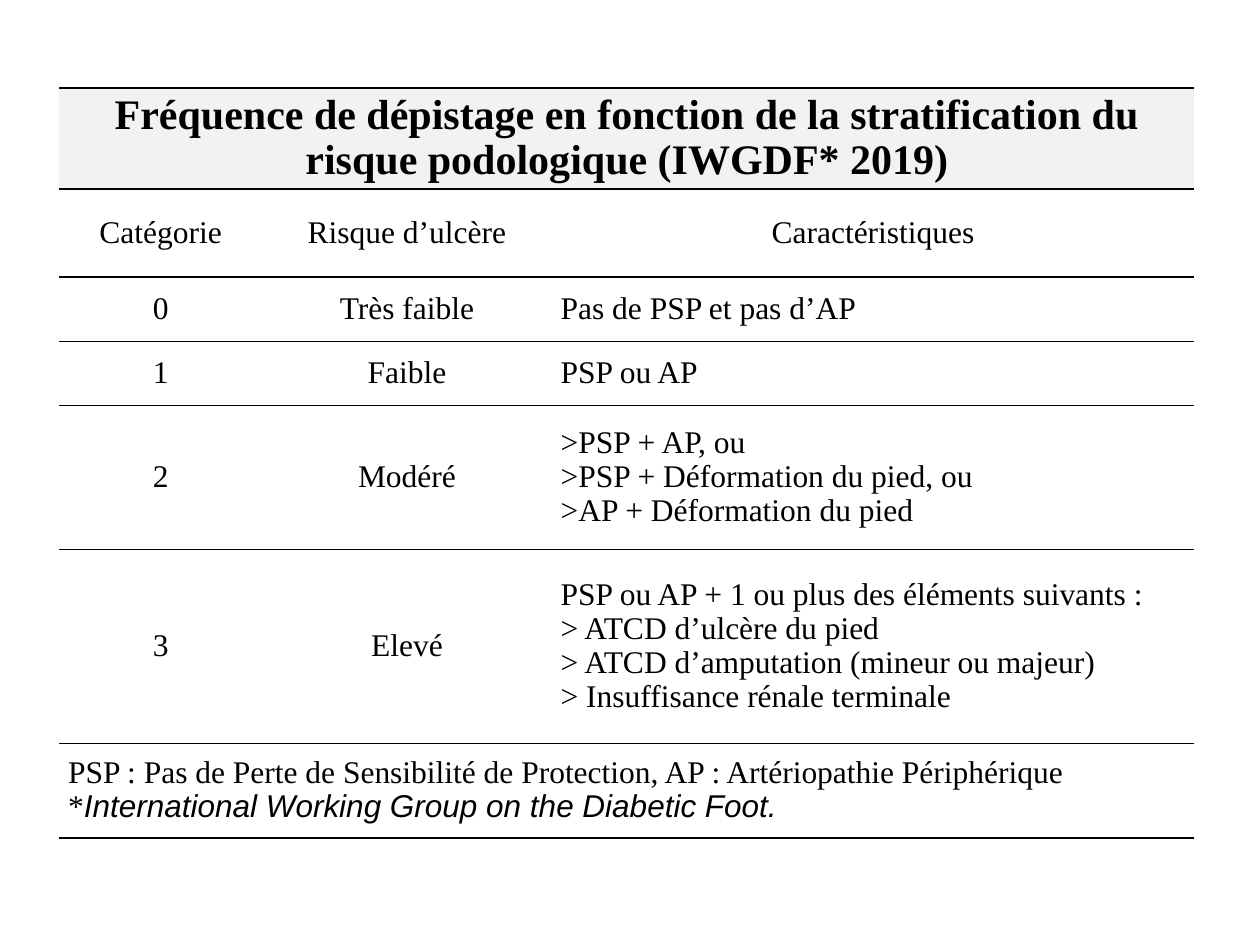
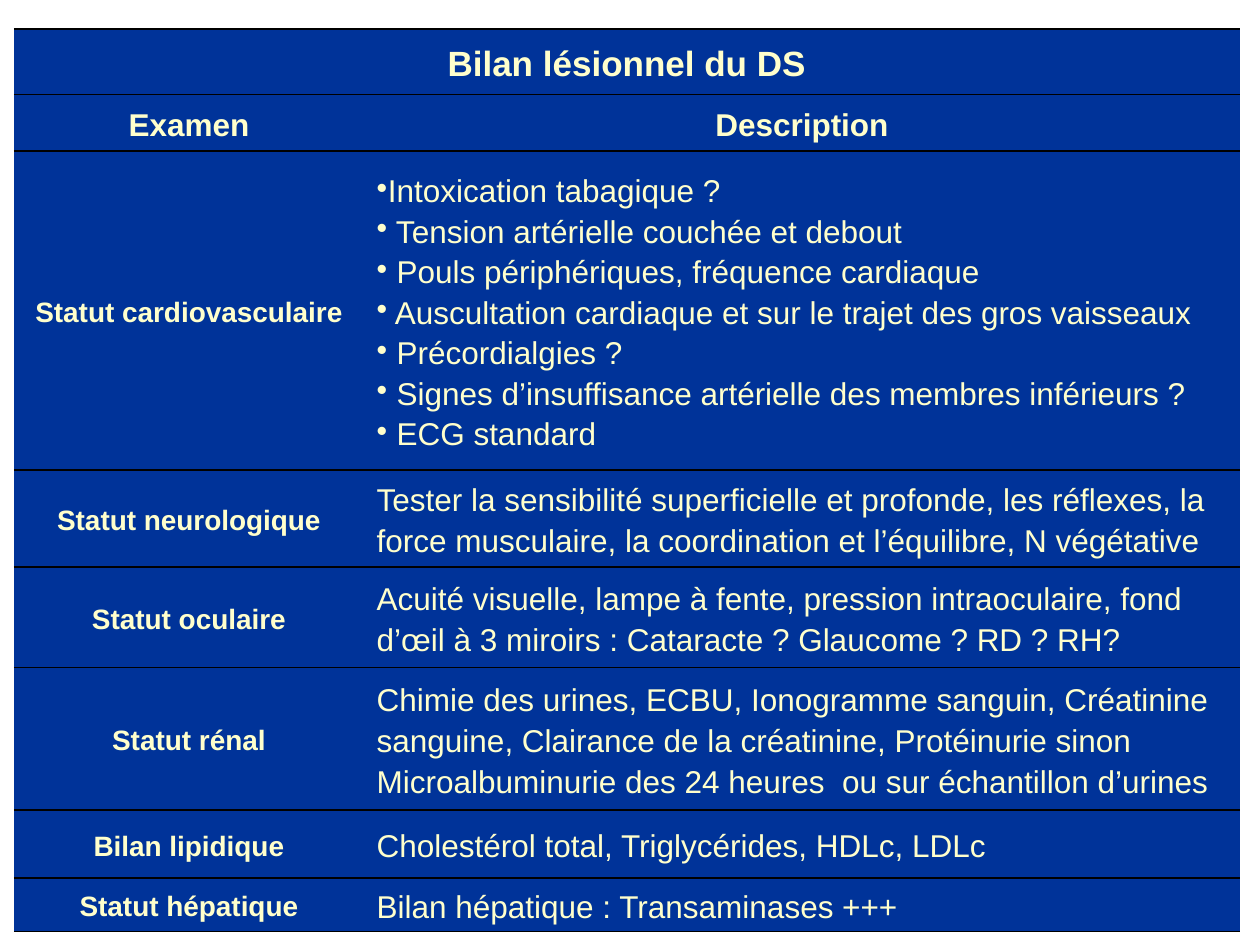
import pptx
import pptx.dml.color
import pptx.enum.text
import pptx.oxml.ns
import pptx.util
from lxml import etree

Inches = pptx.util.Inches
CENTER = pptx.enum.text.PP_ALIGN.CENTER
LEFT = pptx.enum.text.PP_ALIGN.LEFT
BLACK, PALE_GREY, NAVY, CREAM = "000000", "F2F2F2", "003399", "FFFFCC"
SERIF, SANS = "Times New Roman", "Arial"


def color(hex_string):
    return pptx.dml.color.RGBColor.from_string(hex_string)


def add_xml(parent, tag, **attributes):
    return etree.SubElement(parent, pptx.oxml.ns.qn(tag), attributes)


class Deck:
    """Holds the current slide and the style of its table."""

    def __init__(self):
        self.presentation = pptx.Presentation()
        self.presentation.slide_width = Inches(10)
        self.presentation.slide_height = Inches(7.5)

    def new_slide(self, font, ink, margins, spacing):
        self.slide = self.presentation.slides.add_slide(
            self.presentation.slide_layouts[6])
        self.font, self.ink = font, ink
        self.margins, self.spacing = margins, spacing

    def table(self, left, top, widths, heights):
        table = self.slide.shapes.add_table(
            len(heights), len(widths), Inches(left), Inches(top),
            Inches(sum(widths)), Inches(sum(heights))).table
        table.first_row = table.horz_banding = False
        for column, width in zip(table.columns, widths):
            column.width = Inches(width)
        for row, height in zip(table.rows, heights):
            row.height = Inches(height)
        for cell in table.iter_cells():
            self.rules(cell)
            cell.fill.background()
        return table

    def rules(self, cell):
        """Black rules above and below, nothing at the sides."""
        properties = cell._tc.get_or_add_tcPr()
        for side in ("a:lnL", "a:lnR"):
            add_xml(add_xml(properties, side, w="0"), "a:noFill")
        for side in ("a:lnT", "a:lnB"):
            line = add_xml(properties, side, w=str(pptx.util.Pt(1)))
            add_xml(add_xml(line, "a:solidFill"), "a:srgbClr", val=BLACK)

    def merge_row(self, table, row):
        table.cell(row, 0).merge(table.cell(row, len(table.columns) - 1))

    def style_run(self, run, size, bold=False, italic=False, font=None):
        run.font.name = font or self.font
        run.font.size = pptx.util.Pt(size)
        run.font.bold, run.font.italic = bold, italic
        run.font.color.rgb = color(self.ink)

    def cell(self, cell, text, size=18, bold=False, align=CENTER, fill=None,
             bullets=False):
        side, edge = self.margins
        cell.margin_left = cell.margin_right = Inches(side)
        cell.margin_top = cell.margin_bottom = Inches(edge)
        cell.vertical_anchor = pptx.enum.text.MSO_ANCHOR.MIDDLE
        if fill:
            cell.fill.solid()
            cell.fill.fore_color.rgb = color(fill)
        cell.text_frame.text = text
        for paragraph in cell.text_frame.paragraphs:
            paragraph.alignment = align
            paragraph.line_spacing = self.spacing
            if bullets:
                add_xml(paragraph._p.get_or_add_pPr(), "a:buChar", char="•")
            for run in paragraph.runs:
                self.style_run(run, size, bold)


def screening_slide(deck):
    deck.new_slide(SERIF, BLACK, (0.07, 0), 0.97)
    table = deck.table(0.47, 0.7, [1.61, 2.3, 5.1],
                       [0.8, 0.7, 0.51, 0.51, 1.14, 1.54, 0.75])

    # Heading
    deck.merge_row(table, 0)
    deck.cell(table.cell(0, 0),
              "Fréquence de dépistage en fonction de la stratification du "
              "risque podologique (IWGDF* 2019)", 24, True, fill=PALE_GREY)

    # Risk categories
    risk_rows = [
        ("Catégorie", "Risque d’ulcère", "Caractéristiques"),
        ("0", "Très faible", "Pas de PSP et pas d’AP"),
        ("1", "Faible", "PSP ou AP"),
        ("2", "Modéré", ">PSP + AP, ou\n>PSP + Déformation du pied, ou\n"
                        ">AP + Déformation du pied"),
        ("3", "Elevé", "PSP ou AP + 1 ou plus des éléments suivants :\n"
                       "> ATCD d’ulcère du pied\n"
                       "> ATCD d’amputation (mineur ou majeur)\n"
                       "> Insuffisance rénale terminale"),
    ]
    for row, texts in enumerate(risk_rows, 1):
        for column, text in enumerate(texts):
            is_feature = row > 1 and column == 2
            deck.cell(table.cell(row, column), text,
                      align=LEFT if is_feature else CENTER)

    # Abbreviations
    deck.merge_row(table, 6)
    abbreviations = table.cell(6, 0)
    deck.cell(abbreviations,
              "PSP : Pas de Perte de Sensibilité de Protection, "
              "AP : Artériopathie Périphérique\n*", align=LEFT)
    working_group = abbreviations.text_frame.paragraphs[1].add_run()
    working_group.text = "International Working Group on the Diabetic Foot."
    deck.style_run(working_group, 18, italic=True, font=SANS)


def assessment_slide(deck):
    deck.new_slide(SANS, CREAM, (0.1, 0.05), 1.15)
    table = deck.table(0.11, 0.23, [2.78, 6.95],
                       [0.52, 0.45, 2.53, 0.77, 0.8, 1.13, 0.54, 0.42])

    # Headings
    deck.merge_row(table, 0)
    deck.cell(table.cell(0, 0), "Bilan lésionnel du DS", 20, True, fill=NAVY)
    for column, heading in enumerate(("Examen", "Description")):
        deck.cell(table.cell(1, column), heading, bold=True, fill=NAVY)

    # Examinations
    examinations = [
        ("Statut cardiovasculaire",
         "Intoxication tabagique ?\n"
         " Tension artérielle couchée et debout\n"
         " Pouls périphériques, fréquence cardiaque\n"
         " Auscultation cardiaque et sur le trajet des gros vaisseaux\n"
         " Précordialgies ?\n"
         " Signes d’insuffisance artérielle des membres inférieurs ?\n"
         " ECG standard"),
        ("Statut neurologique",
         "Tester la sensibilité superficielle et profonde, les réflexes, la "
         "force musculaire, la coordination et l’équilibre, N végétative"),
        ("Statut oculaire",
         "Acuité visuelle, lampe à fente, pression intraoculaire, fond "
         "d’œil à 3 miroirs : Cataracte ? Glaucome ? RD ? RH?"),
        ("Statut rénal",
         "Chimie des urines, ECBU, Ionogramme sanguin, Créatinine sanguine, "
         "Clairance de la créatinine, Protéinurie sinon Microalbuminurie "
         "des 24 heures  ou sur échantillon d’urines"),
        ("Bilan lipidique", "Cholestérol total, Triglycérides, HDLc, LDLc"),
        ("Statut hépatique", "Bilan hépatique : Transaminases +++"),
    ]
    for row, (examination, description) in enumerate(examinations, 2):
        deck.cell(table.cell(row, 0), examination, 16, True, fill=NAVY)
        deck.cell(table.cell(row, 1), description, align=LEFT, fill=NAVY,
                  bullets="\n" in description)


def main():
    deck = Deck()
    screening_slide(deck)
    assessment_slide(deck)
    deck.presentation.save("out.pptx")


if __name__ == "__main__":
    main()
